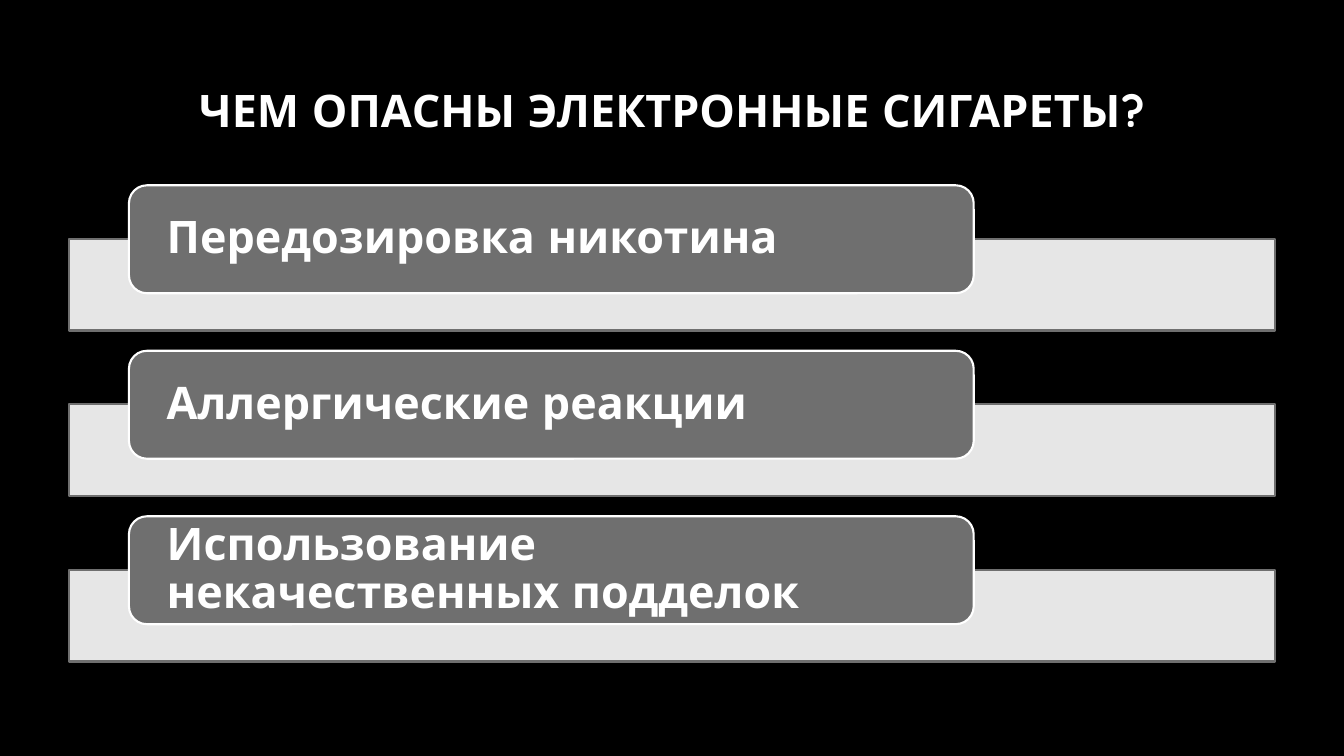
from dataclasses import dataclass

from lxml.etree import SubElement
from pptx import Presentation
from pptx.dml.color import RGBColor
from pptx.enum.shapes import MSO_SHAPE
from pptx.enum.text import MSO_ANCHOR, PP_ALIGN
from pptx.oxml.ns import qn
from pptx.util import Cm, Pt

TITLE = "ЧЕМ ОПАСНЫ ЭЛЕКТРОННЫЕ СИГАРЕТЫ?"
DANGERS = [
    "Передозировка никотина",
    "Аллергические реакции",
    "Использование некачественных подделок",
]


@dataclass(frozen=True)
class Theme:
    background: RGBColor = RGBColor(0x00, 0x00, 0x00)
    light: RGBColor = RGBColor(0xFF, 0xFF, 0xFF)
    grey: RGBColor = RGBColor(0x6F, 0x6F, 0x6F)
    bar_opacity: int = 90
    font: str = "Quicksand"
    text_size: Pt = Pt(32)
    line_width: Pt = Pt(1.5)


THEME = Theme()

# Lengths in centimetres
TITLE_BOX = (3.18, 0.13, 27.51, 5.28)
BAR_LEFT, BAR_WIDTH, BAR_HEIGHT = 1.73, 30.4, 2.31
LABEL_LEFT, LABEL_WIDTH, LABEL_HEIGHT = 3.25, 21.29, 2.72
FIRST_LABEL_TOP, ROW_STEP, BAR_DROP = 4.67, 4.17, 1.35
LABEL_INSET = 0.82


def write_text(shape, text, align=PP_ALIGN.LEFT, inset=0.25, line_spacing=0.9):
    frame = shape.text_frame
    frame.word_wrap = True
    frame.vertical_anchor = MSO_ANCHOR.MIDDLE
    frame.margin_left = frame.margin_right = Cm(inset)
    frame.margin_top = frame.margin_bottom = Cm(0)
    para = frame.paragraphs[0]
    para.alignment = align
    para.line_spacing = line_spacing
    span = para.add_run()
    span.text = text
    span.font.name = THEME.font
    span.font.size = THEME.text_size
    span.font.bold = True
    span.font.color.rgb = THEME.light


def add_panel(page, kind, box, fill, line, opacity=100):
    """Add a filled, outlined shape; opacity is a percentage."""
    panel = page.shapes.add_shape(kind, *map(Cm, box))
    panel.shadow.inherit = False
    panel.fill.solid()
    panel.fill.fore_color.rgb = fill
    if opacity < 100:
        color = panel.fill._xPr.find(qn("a:solidFill"))[0]
        SubElement(color, qn("a:alpha"), val=str(opacity * 1000))
    panel.line.color.rgb = line
    panel.line.width = THEME.line_width
    return panel


def add_danger(page, text, top):
    add_panel(page, MSO_SHAPE.RECTANGLE,
              (BAR_LEFT, top + BAR_DROP, BAR_WIDTH, BAR_HEIGHT),
              THEME.light, THEME.grey, opacity=THEME.bar_opacity)
    label = add_panel(page, MSO_SHAPE.ROUNDED_RECTANGLE,
                      (LABEL_LEFT, top, LABEL_WIDTH, LABEL_HEIGHT),
                      THEME.grey, THEME.light)
    write_text(label, text, inset=LABEL_INSET)


def main():
    deck = Presentation()
    deck.slide_width, deck.slide_height = Cm(33.87), Cm(19.05)
    page = deck.slides.add_slide(deck.slide_layouts[5])
    page.background.fill.solid()
    page.background.fill.fore_color.rgb = THEME.background

    title = page.shapes.title
    title.left, title.top, title.width, title.height = map(Cm, TITLE_BOX)
    write_text(title, TITLE, align=PP_ALIGN.CENTER, line_spacing=1.0)

    for row, danger in enumerate(DANGERS):
        add_danger(page, danger, FIRST_LABEL_TOP + row * ROW_STEP)
    deck.save("out.pptx")


if __name__ == "__main__":
    main()
